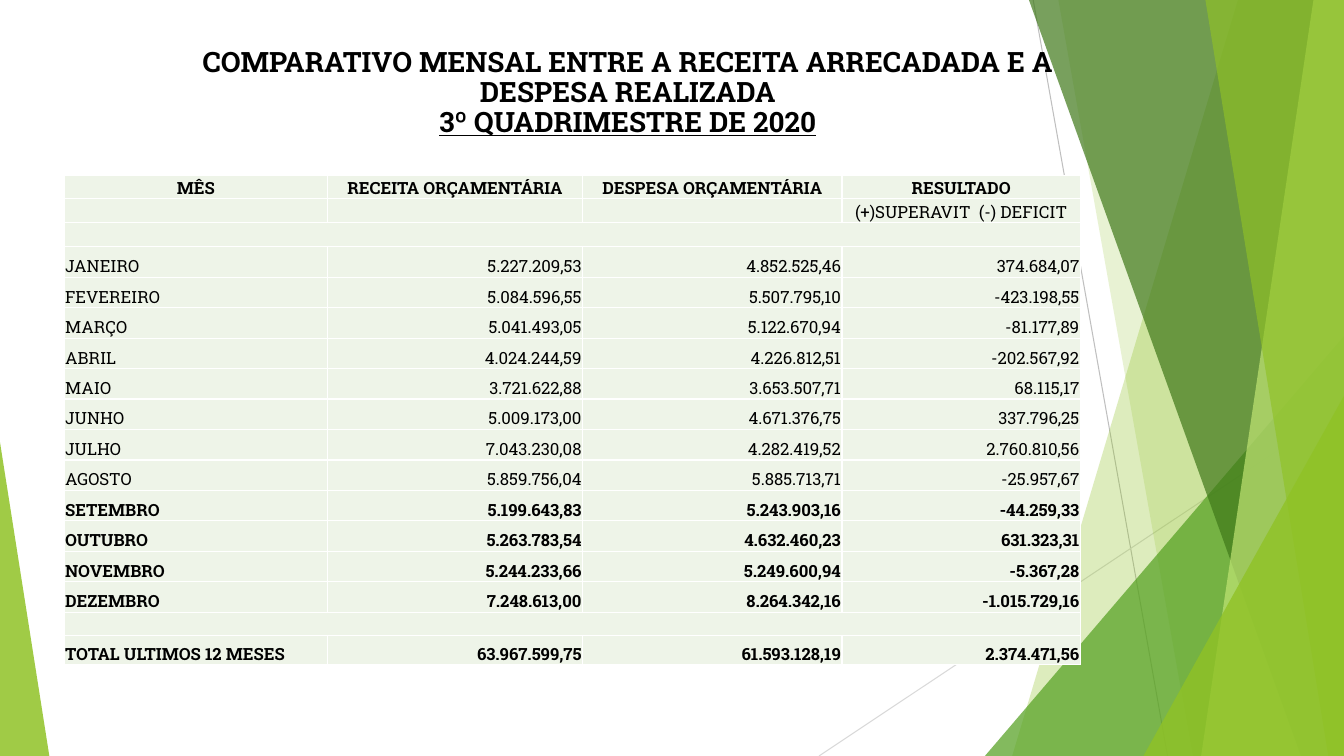
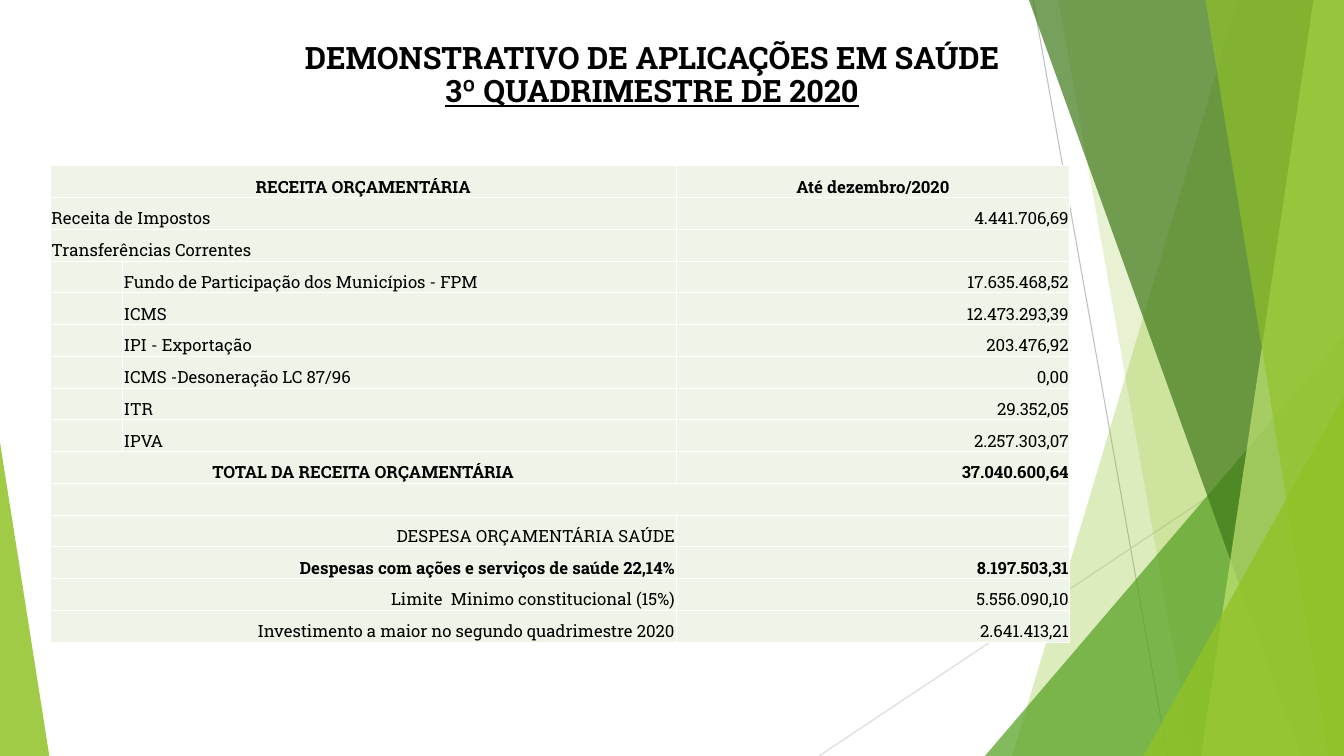
from dataclasses import dataclass

from lxml.etree import SubElement
from pptx import Presentation
from pptx.dml.color import RGBColor
from pptx.enum.shapes import MSO_CONNECTOR, MSO_SHAPE
from pptx.enum.text import MSO_ANCHOR, MSO_AUTO_SIZE, PP_ALIGN
from pptx.oxml.ns import qn
from pptx.util import Pt

EMU_PER_PX = 9525
WIDTH, HEIGHT = 1280, 720
ALIGN = {"l": PP_ALIGN.LEFT, "c": PP_ALIGN.CENTER, "r": PP_ALIGN.RIGHT}


@dataclass(frozen=True)
class Theme:
    font: str = "Roboto Slab"
    text: str = "000000"
    cell: str = "EEF4E8"
    border: str = "FFFFFF"
    lime: str = "90C226"
    pale_lime: str = "C0E474"
    green: str = "54A021"
    dark_green: str = "3F7819"
    gray: str = "BFBFBF"
    light_gray: str = "D9D9D9"
    cell_size: int = 12
    border_width: float = 1
    hairline: float = 0.75
    title_spacing: float = 0.9


THEME = Theme()


@dataclass
class Row:
    """One table row; a None text joins its cell to the one on the left."""
    texts: list
    aligns: str
    bold: bool = False


def px(length):
    return round(length * EMU_PER_PX)


def rgb(color):
    return RGBColor.from_string(color)


def add_run(paragraph, text, size, bold=False, underline=False):
    run = paragraph.add_run()
    run.text = text
    font = run.font
    font.name, font.size = THEME.font, Pt(size)
    font.bold, font.underline = bold, underline
    font.color.rgb = rgb(THEME.text)


# Backdrop

def paint(shape, color, opacity):
    """Fill with a see-through colour, without outline or shadow."""
    shape.shadow.inherit = False
    shape.line.fill.background()
    shape.fill.solid()
    shape.fill.fore_color.rgb = rgb(color)
    srgb = shape.element.spPr.find(".//" + qn("a:srgbClr"))
    SubElement(srgb, qn("a:alpha"), val=str(opacity * 1000))


def add_hairline(shapes, start, end, color):
    line = shapes.add_connector(MSO_CONNECTOR.STRAIGHT, *map(px, start + end))
    line.line.color.rgb = rgb(color)
    line.line.width = Pt(THEME.hairline)
    SubElement(line.element.spPr, qn("a:effectLst"))


def add_band(shapes, top_x, bottom_x, color, opacity):
    """Full-height band from a slanted left edge to the right slide edge."""
    outline = shapes.build_freeform(px(top_x), 0)
    corners = [(WIDTH, 0), (WIDTH, HEIGHT), (bottom_x, HEIGHT)]
    outline.add_line_segments([(px(x), px(y)) for x, y in corners])
    paint(outline.convert_to_shape(), color, opacity)


def add_corner(shapes, left, top, width, apex, color, opacity):
    """Triangle standing on the bottom slide edge."""
    corner = shapes.add_shape(MSO_SHAPE.ISOSCELES_TRIANGLE, px(left), px(top),
                              px(width), px(HEIGHT - top))
    corner.adjustments[0] = apex
    paint(corner, color, opacity)


def draw_backdrop(shapes):
    add_hairline(shapes, (984, 0), (1112, HEIGHT), THEME.gray)
    add_hairline(shapes, (WIDTH, 387), (780, HEIGHT), THEME.light_gray)
    add_band(shapes, 1179, 964, THEME.lime, 30)
    add_band(shapes, 1008, 1136, THEME.lime, 20)
    add_corner(shapes, 938, 320, 342, 1, THEME.green, 72)
    add_band(shapes, 980, 1239, THEME.dark_green, 70)
    add_band(shapes, 1251, 1144, THEME.pale_lime, 70)
    add_band(shapes, 1148, 1265, THEME.lime, 65)
    add_corner(shapes, 1089, 377, 191, 1, THEME.lime, 80)
    add_corner(shapes, 0, 421, 47, 0, THEME.lime, 85)


def share_backdrop(slide):
    """Draw the backdrop and hand it to the layout, behind its title."""
    layout = slide.slide_layout
    layout_title, *footers = layout.placeholders
    for footer in footers:
        layout.shapes.element.remove(footer.element)
    draw_backdrop(slide.shapes)
    for shape in list(slide.shapes):
        if not shape.is_placeholder:
            layout_title.element.addprevious(shape.element)


# Content

def set_title(slide, box, size, heading, period):
    title = slide.shapes.title
    title.left, title.top, title.width, title.height = map(px, box)
    frame = title.text_frame
    frame.word_wrap = True
    frame.auto_size = MSO_AUTO_SIZE.NONE
    frame.vertical_anchor = MSO_ANCHOR.TOP
    paragraph = frame.paragraphs[0]
    paragraph.alignment = PP_ALIGN.CENTER
    paragraph.line_spacing = THEME.title_spacing
    add_run(paragraph, heading, size, bold=True)
    paragraph.add_line_break()
    add_run(paragraph, period, size, bold=True, underline=True)


def add_borders(cell):
    properties = cell._tc.get_or_add_tcPr()
    for side in ("lnL", "lnR", "lnT", "lnB"):
        edge = SubElement(properties, qn(f"a:{side}"),
                          w=str(Pt(THEME.border_width)))
        fill = SubElement(edge, qn("a:solidFill"))
        SubElement(fill, qn("a:srgbClr"), val=THEME.border)


def fill_cell(cell, text, align, bold):
    add_borders(cell)
    cell.fill.solid()
    cell.fill.fore_color.rgb = rgb(THEME.cell)
    cell.vertical_anchor = MSO_ANCHOR.BOTTOM
    cell.margin_left = cell.margin_right = cell.margin_top = px(1)
    cell.margin_bottom = 0
    paragraph = cell.text_frame.paragraphs[0]
    paragraph.alignment = ALIGN[align]
    if text:
        add_run(paragraph, text, THEME.cell_size, bold)
    else:
        SubElement(paragraph._p, qn("a:endParaRPr"),
                   sz=str(THEME.cell_size * 100))


def add_budget_table(slide, left, top, widths, height, rows, row_heights=()):
    """Rows share the height equally unless row_heights are given."""
    table = slide.shapes.add_table(len(rows), len(widths), px(left), px(top),
                                   px(sum(widths)), px(height)).table
    table.first_row = table.horz_banding = False
    for column, width in zip(table.columns, widths):
        column.width = px(width)
    for table_row, row_height in zip(table.rows, row_heights):
        table_row.height = px(row_height)
    for r, row in enumerate(rows):
        for c, (text, align) in enumerate(zip(row.texts, row.aligns)):
            fill_cell(table.cell(r, c), text, align, row.bold)
        joined = row.texts.count(None)
        if joined:
            first = row.texts.index(None) - 1
            table.cell(r, first).merge(table.cell(r, first + joined))


MONTHS = [
    ("JANEIRO", "5.227.209,53", "4.852.525,46", "374.684,07"),
    ("FEVEREIRO", "5.084.596,55", "5.507.795,10", "-423.198,55"),
    ("MARÇO", "5.041.493,05", "5.122.670,94", "-81.177,89"),
    ("ABRIL", "4.024.244,59", "4.226.812,51", "-202.567,92"),
    ("MAIO", "3.721.622,88", "3.653.507,71", "68.115,17"),
    ("JUNHO", "5.009.173,00", "4.671.376,75", "337.796,25"),
    ("JULHO", "7.043.230,08", "4.282.419,52", "2.760.810,56"),
    ("AGOSTO", "5.859.756,04", "5.885.713,71", "-25.957,67"),
    ("SETEMBRO", "5.199.643,83", "5.243.903,16", "-44.259,33"),
    ("OUTUBRO", "5.263.783,54", "4.632.460,23", "631.323,31"),
    ("NOVEMBRO", "5.244.233,66", "5.249.600,94", "-5.367,28"),
    ("DEZEMBRO", "7.248.613,00", "8.264.342,16", "-1.015.729,16"),
]
FIRST_MONTH_OF_PERIOD = 8

TRANSFERS = [
    ("Fundo de Participação dos Municípios - FPM", "17.635.468,52"),
    ("ICMS", "12.473.293,39"),
    ("IPI - Exportação", "203.476,92"),
    ("ICMS -Desoneração LC 87/96", "0,00"),
    ("ITR", "29.352,05"),
    ("IPVA", "2.257.303,07"),
]
PERIOD = "3º QUADRIMESTRE DE 2020"


def build_monthly_comparison(slide):
    set_title(slide, (138, 41, 920, 162), 20,
              "COMPARATIVO MENSAL ENTRE A RECEITA ARRECADADA E A "
              "DESPESA REALIZADA", PERIOD)
    separator = Row(["", None, None, None], "llll")
    rows = [
        Row(["MÊS", "RECEITA ORÇAMENTÁRIA", "DESPESA ORÇAMENTÁRIA",
             "RESULTADO"], "cccc", True),
        Row(["", "", "", "(+)SUPERAVIT  (-) DEFICIT"], "cccc"),
        separator,
        *(Row(month, "lrrr", i >= FIRST_MONTH_OF_PERIOD)
          for i, month in enumerate(MONTHS)),
        separator,
        Row(["TOTAL ULTIMOS 12 MESES", "63.967.599,75", "61.593.128,19",
             "2.374.471,56"], "lrrr", True),
    ]
    row_heights = [22, 23, 23] + [29] * len(MONTHS) + [22, 28]
    add_budget_table(slide, 61, 167, [251, 243, 247, 227], sum(row_heights),
                     rows, row_heights)


def build_health_spending(slide):
    set_title(slide, (170, 36, 902, 138), 22,
              "DEMONSTRATIVO DE APLICAÇÕES EM SAÚDE", PERIOD)
    rows = [
        Row(["RECEITA ORÇAMENTÁRIA", None, "Até dezembro/2020"], "ccc", True),
        Row(["Receita de Impostos", None, "4.441.706,69"], "llr"),
        Row(["Transferências Correntes", None, ""], "llr"),
        *(Row(["", source, amount], "llr") for source, amount in TRANSFERS),
        Row(["TOTAL DA RECEITA ORÇAMENTÁRIA", None, "37.040.600,64"],
            "ccr", True),
        Row(["", None, None], "lll"),
        Row(["DESPESA ORÇAMENTÁRIA SAÚDE", None, ""], "rrr"),
        Row(["Despesas com ações e serviços de saúde 22,14%", None,
             "8.197.503,31"], "rrr", True),
        Row(["Limite  Minimo constitucional (15%)", None, "5.556.090,10"],
            "rrr"),
        Row(["Investimento a maior no segundo quadrimestre 2020", None,
             "2.641.413,21"], "rrr"),
    ]
    add_budget_table(slide, 48, 158, [69, 527, 375], 454, rows)


def main():
    deck = Presentation()
    deck.slide_width, deck.slide_height = px(WIDTH), px(HEIGHT)
    title_only = deck.slide_layouts[5]
    comparison = deck.slides.add_slide(title_only)
    share_backdrop(comparison)
    build_monthly_comparison(comparison)
    build_health_spending(deck.slides.add_slide(title_only))
    deck.save("out.pptx")


if __name__ == "__main__":
    main()
